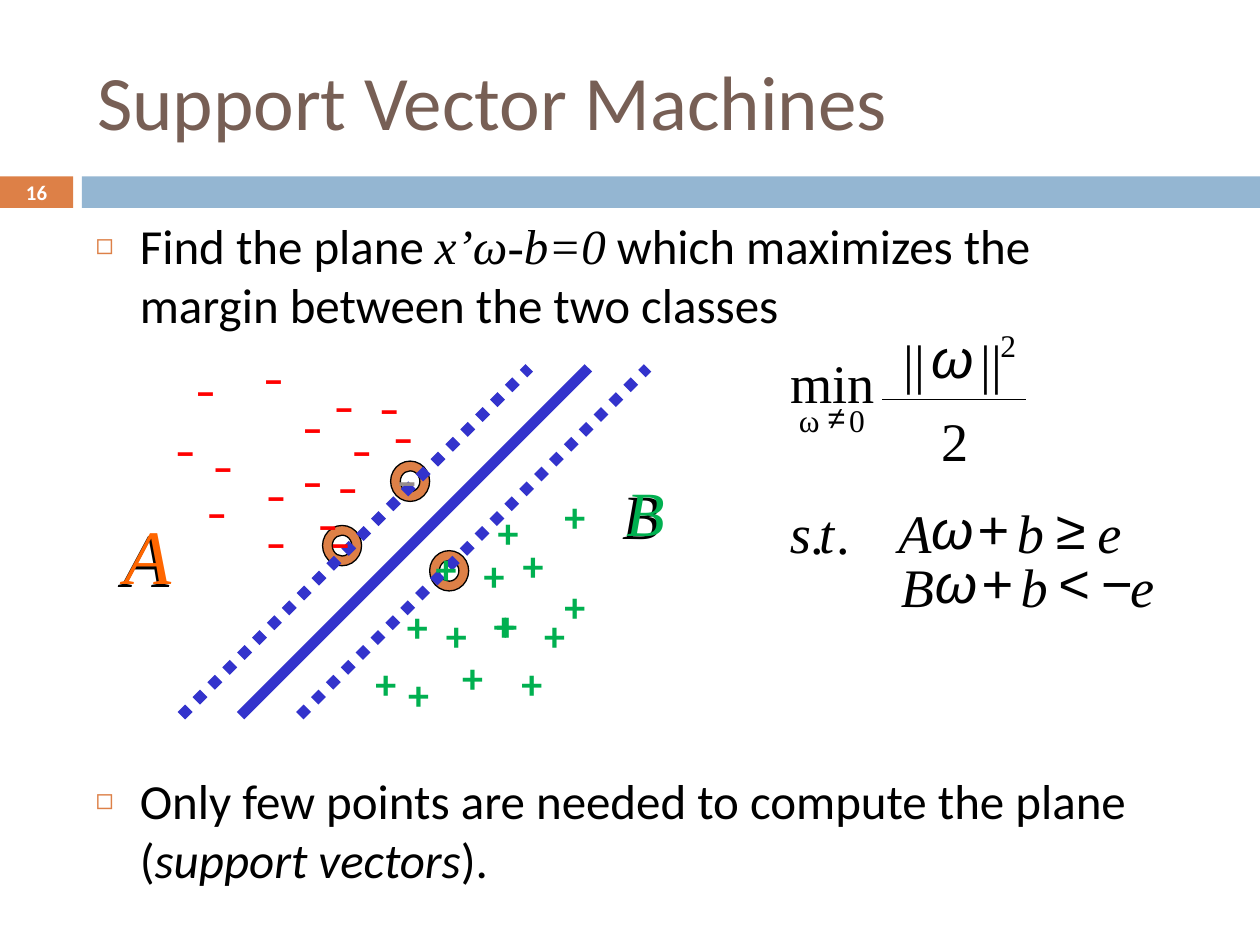
from lxml.etree import SubElement
from pptx import Presentation
from pptx.dml.color import RGBColor
from pptx.enum.dml import MSO_LINE
from pptx.enum.shapes import MSO_CONNECTOR, MSO_SHAPE
from pptx.enum.text import MSO_ANCHOR, MSO_AUTO_SIZE, PP_ALIGN
from pptx.oxml.ns import qn
from pptx.util import Inches, Pt

# Content
TITLE = "Support Vector Machines"
NUMBER = "16"
SANS, SERIF, MATH = "Calibri", "Times New Roman", "Arial"
COLORS = {
    "title": "775F55", "accent": "DD8047", "bar": "94B6D2", "plane": "3333CC",
    "red": "FF0000", "green": "00B050", "gray": "968C8C", "orange": "FF6600",
    "black": "000000", "white": "FFFFFF",
}
# Each bullet: space before in points, then runs of text, font, italic
BULLETS = [
    (7, [("Find the plane ", SANS, False), ("x’ω-b=0", SERIF, True),
         (" which maximizes the margin between the two classes", SANS, False)]),
    (250, [("Only few points are needed to compute the plane (", SANS, False),
           ("support vectors", SANS, True), (").", SANS, False)]),
]
# Class names: text, left, top, width, height, size, colour
LABELS = [
    ("A", 0.87, 4, 0.61, 0.83, 44, "black"),
    ("B", 4.84, 3.73, 0.53, 0.7, 36, "black"),
    ("B", 4.87, 3.71, 0.51, 0.7, 36, "green"),
    ("A", 0.89, 3.98, 0.57, 0.83, 44, "orange"),
]
RINGS = [(2.56, 4.17), (3.41, 4.37), (3.1, 3.66)]
# Points of each class: sign, colour, box width, places
POINTS = [
    ("–", "red", 0.46, [
        (2.42, 3.91), (1.29, 3.32), (1.59, 3.45), (1.45, 2.84), (1.99, 2.75),
        (2.3, 3.14), (2.55, 2.97), (2.91, 2.99), (3.02, 3.22), (2.69, 3.32),
        (2.58, 3.61), (2.3, 3.57), (2.01, 3.68), (1.54, 3.81), (2.01, 4.05),
        (2.52, 4.05)]),
    ("–", "gray", 0.44, [(3.05, 3.56)]),
    ("+", "green", 0.52, [
        (2.88, 5.17), (3.14, 5.26), (3.13, 4.72), (3.36, 4.26), (3.44, 4.79),
        (3.57, 5.12), (3.85, 3.97), (3.74, 4.31), (3.84, 4.71), (4.05, 4.23),
        (3.82, 4.71), (4.04, 5.17), (4.38, 3.84), (4.38, 4.56), (4.22, 4.79)]),
]
# Formula: font, size, italic, then glyphs with left, top, width
FORMULA = [
    (SERIF, 31, True, [
        ("e", 8.97, 4.39, 0.19), ("b", 8.1, 4.39, 0.22), ("B", 7.15, 4.39, 0.26),
        ("e", 8.71, 3.96, 0.19), ("b", 8.07, 3.96, 0.22), ("A", 7.13, 3.96, 0.26),
        ("t", 6.5, 3.96, 0.12), ("s", 6.27, 3.96, 0.17)]),
    (MATH, 31, False, [
        ("−", 8.74, 4.36, 0.24), ("<", 8.4, 4.36, 0.24), ("+", 7.79, 4.36, 0.24),
        ("≥", 8.38, 3.93, 0.24), ("+", 7.76, 3.93, 0.24)]),
    (MATH, 18, False, [("≠", 6.57, 3.16, 0.14)]),
    (MATH, 31, True, [
        ("ω", 7.42, 4.36, 0.3), ("ω", 7.39, 3.93, 0.3), ("ω", 7.39, 2.57, 0.3)]),
    (SERIF, 31, False, [
        (".", 6.64, 3.97, 0.11), (".", 6.43, 3.97, 0.11), ("2", 7.47, 3.23, 0.22),
        ("||", 7.78, 2.61, 0.18), ("||", 7.17, 2.61, 0.18), ("min", 6.27, 2.77, 0.68)]),
    (SERIF, 18, False, [
        ("2", 7.94, 2.59, 0.13), ("0", 6.74, 3.18, 0.13), ("ω", 6.34, 3.18, 0.17)]),
]


def color(name):
    return RGBColor.from_string(COLORS[name])


def place(shape, left, top, width, height):
    shape.left, shape.top = Inches(left), Inches(top)
    shape.width, shape.height = Inches(width), Inches(height)


def add_run(para, text, font, size, tint, bold=False, italic=False):
    run = para.add_run()
    run.text = text
    run.font.name, run.font.size = font, Pt(size)
    run.font.bold, run.font.italic = bold, italic
    run.font.color.rgb = color(tint)


def add_label(slide, text, box, font, size, tint, bold=False, italic=False, inset=True):
    frame = slide.shapes.add_textbox(*map(Inches, box)).text_frame
    frame.word_wrap = False
    frame.auto_size = MSO_AUTO_SIZE.SHAPE_TO_FIT_TEXT
    if not inset:
        frame.margin_left = frame.margin_right = 0
        frame.margin_top = frame.margin_bottom = 0
    add_run(frame.paragraphs[0], text, font, size, tint, bold, italic)


def add_solid(slide, kind, box, tint):
    shape = slide.shapes.add_shape(kind, *map(Inches, box))
    shape.shadow.inherit = False
    shape.fill.solid()
    shape.fill.fore_color.rgb = color(tint)
    shape.line.fill.background()
    return shape


def add_line(slide, ends, tint, width, dash=None):
    line = slide.shapes.add_connector(MSO_CONNECTOR.STRAIGHT, *map(Inches, ends))
    line.line.color.rgb = color(tint)
    line.line.width = Pt(width)
    if dash:
        line.line.dash_style = dash
    SubElement(line._element.spPr, qn("a:effectLst"))


def add_bullet(para):
    props = para._p.get_or_add_pPr()
    props.set("marL", str(Inches(0.35)))
    props.set("indent", str(-Inches(0.35)))
    tint = SubElement(props, qn("a:buClr"))
    SubElement(tint, qn("a:srgbClr"), val=COLORS["accent"])
    SubElement(props, qn("a:buSzPct"), val="60000")
    SubElement(props, qn("a:buChar"), char="◻")


def add_heads(slide):
    # Title, bars and slide number
    title = slide.shapes.title
    place(title, 0.67, 0.25, 8.92, 1.08)
    frame = title.text_frame
    frame.vertical_anchor = MSO_ANCHOR.MIDDLE
    frame.paragraphs[0].alignment = PP_ALIGN.LEFT
    add_run(frame.paragraphs[0], TITLE, SANS, 44, "title")
    add_solid(slide, MSO_SHAPE.RECTANGLE, (0, 1.4, 0.58, 0.25), "accent")
    add_solid(slide, MSO_SHAPE.RECTANGLE, (0.65, 1.4, 9.35, 0.25), "bar")
    box = slide.shapes.add_textbox(*map(Inches, (0, 1.39, 0.58, 0.27)))
    frame = box.text_frame
    frame.word_wrap = True
    frame.vertical_anchor = MSO_ANCHOR.MIDDLE
    frame.paragraphs[0].alignment = PP_ALIGN.CENTER
    add_run(frame.paragraphs[0], NUMBER, SANS, 11.9, "white", bold=True)


def add_body(slide):
    body = slide.placeholders[1]
    place(body, 0.66, 1.66, 8.5, 5.67)
    frame = body.text_frame
    frame.auto_size = MSO_AUTO_SIZE.NONE
    for i, (gap, runs) in enumerate(BULLETS):
        para = frame.add_paragraph() if i else frame.paragraphs[0]
        para.space_before = Pt(gap)
        add_bullet(para)
        for text, font, italic in runs:
            add_run(para, text, font, 28, "black", italic=italic)


def add_plot(slide):
    for text, left, top, width, height, size, tint in LABELS:
        add_label(slide, text, (left, top, width, height), SERIF, size, tint, italic=True)
    # Plane, support vectors and margins
    add_line(slide, (1.91, 5.68, 4.67, 2.92), "plane", 6)
    for left, top in RINGS:
        ring = add_solid(slide, MSO_SHAPE.DONUT, (left, top, 0.31, 0.32), "accent")
        ring.adjustments[0] = 0.25
        ring.line.color.rgb = color("black")
        ring.line.width = Pt(0.75)
    for shift in (0.47, -0.47):
        ends = (1.91 + shift, 5.68, 4.67 + shift, 2.92)
        add_line(slide, ends, "plane", 6, MSO_LINE.ROUND_DOT)
    for sign, tint, width, spots in POINTS:
        for left, top in spots:
            add_label(slide, sign, (left, top, width, 0.5), SANS, 24, tint, bold=True)


def add_math(slide):
    add_line(slide, (7, 3.17, 8.14, 3.17), "black", 0.5)
    for font, size, italic, glyphs in FORMULA:
        height = 0.52 if size == 31 else 0.3
        for text, left, top, width in glyphs:
            add_label(slide, text, (left, top, width, height), font, size, "black",
                      italic=italic, inset=False)


def main():
    deck = Presentation()
    deck.slide_width, deck.slide_height = Inches(10), Inches(7.5)
    slide = deck.slides.add_slide(deck.slide_layouts[1])
    for add_part in (add_heads, add_body, add_plot, add_math):
        add_part(slide)
    deck.save("out.pptx")


if __name__ == "__main__":
    main()
